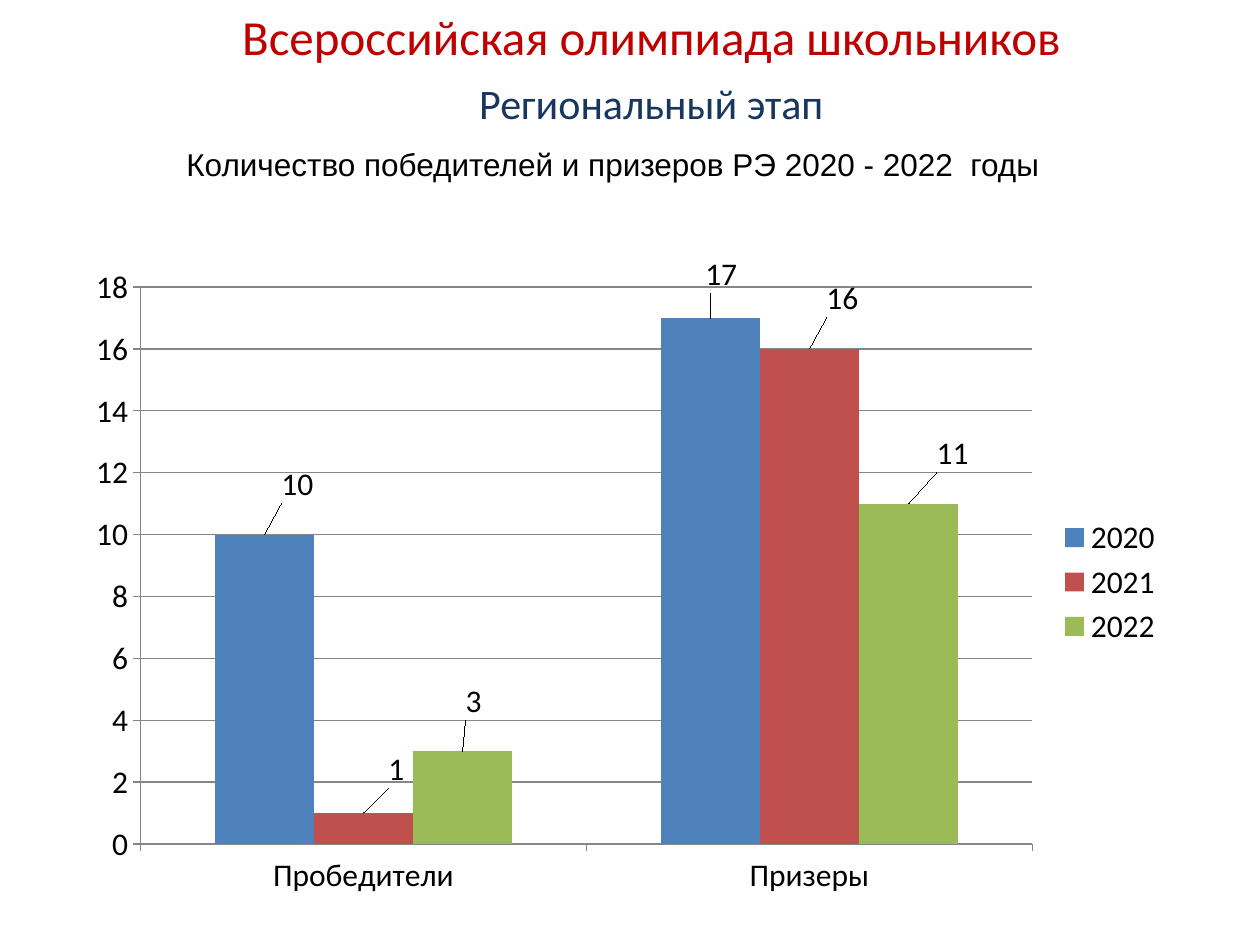
from dataclasses import dataclass

from lxml.etree import SubElement
from pptx import Presentation
from pptx.chart.data import CategoryChartData
from pptx.dml.color import RGBColor
from pptx.enum.chart import XL_CHART_TYPE, XL_LABEL_POSITION, XL_LEGEND_POSITION, XL_TICK_MARK
from pptx.enum.text import PP_ALIGN
from pptx.oxml import parse_xml
from pptx.oxml.ns import nsdecls, qn
from pptx.util import Pt


@dataclass(frozen=True)
class Heading:
    text: str
    left: float
    top: float
    width: float
    height: float
    size: float
    font: str
    color: str


@dataclass(frozen=True)
class Year:
    name: str
    counts: tuple[int, int]
    color: str
    label_shifts: tuple[tuple[float, float], tuple[float, float]]


HEADINGS = (
    Heading("Региональный этап", 24.5, 41, 695.5, 36, 24, "Calibri", "17375E"),
    Heading("Всероссийская олимпиада школьников", 24.5, 0, 695.5, 41, 28, "Calibri", "C00000"),
    Heading("Количество победителей и призеров РЭ 2020 - 2022  годы",
            8.6, 79.2, 683.3, 29, 18, "Arial", "000000"),
)
AWARDS = ("Пробедители", "Призеры")
YEARS = (
    Year("2020", (10, 17), "4F81BD", ((0.03, -0.04), (0.01, -0.03))),
    Year("2021", (1, 16), "C0504D", ((0.03, -0.03), (0.03, -0.04))),
    Year("2022", (3, 11), "9BBB59", ((0.01, -0.04), (0.04, -0.04))),
)
AXIS_COLOR = "868686"


def rgb(value: str) -> RGBColor:
    return RGBColor.from_string(value)


def add_heading(slide, heading: Heading) -> None:
    box = slide.shapes.add_textbox(
        Pt(heading.left), Pt(heading.top), Pt(heading.width), Pt(heading.height))
    box.text_frame.word_wrap = True
    paragraph = box.text_frame.paragraphs[0]
    paragraph.alignment = PP_ALIGN.CENTER
    run = paragraph.add_run()
    run.text = heading.text
    run.font.size = Pt(heading.size)
    run.font.name = heading.font
    run.font.color.rgb = rgb(heading.color)


def manual_layout(**settings: float | str):
    layout = parse_xml(f"<c:layout {nsdecls('c')}><c:manualLayout/></c:layout>")
    for tag, value in settings.items():
        SubElement(layout[0], qn(f"c:{tag}")).set("val", str(value))
    return layout


def style_axis(axis) -> None:
    axis.major_tick_mark = XL_TICK_MARK.OUTSIDE
    axis.minor_tick_mark = XL_TICK_MARK.NONE
    axis.format.line.color.rgb = rgb(AXIS_COLOR)
    axis.format.line.width = Pt(0.75)


def style_year(series, year: Year) -> None:
    series.format.fill.solid()
    series.format.fill.fore_color.rgb = rgb(year.color)
    series.invert_if_negative = False
    series.data_labels.show_value = True
    for index in range(len(AWARDS)):
        series.points[index].data_label.position = XL_LABEL_POSITION.OUTSIDE_END


def add_results_chart(slide) -> None:
    results = CategoryChartData()
    results.categories = AWARDS
    for year in YEARS:
        results.add_series(year.name, year.counts)
    chart = slide.shapes.add_chart(
        XL_CHART_TYPE.COLUMN_CLUSTERED, Pt(42.5), Pt(145.4), Pt(629.3), Pt(374.4), results).chart
    chart.has_title = False
    chart.font.name = "Calibri"
    chart.font.size = Pt(18)
    chart.font.color.rgb = rgb("000000")
    chart.has_legend = True
    chart.legend.position = XL_LEGEND_POSITION.RIGHT
    chart.legend.include_in_layout = False

    plot = chart.plots[0]
    plot.gap_width = 150
    plot.overlap = 0
    plot.vary_by_categories = False
    for series, year in zip(plot.series, YEARS):
        style_year(series, year)

    style_axis(chart.category_axis)
    counts_axis = chart.value_axis
    style_axis(counts_axis)
    counts_axis.minimum_scale = 0
    counts_axis.maximum_scale = 18
    counts_axis.major_unit = 2
    counts_axis.has_major_gridlines = True
    counts_axis.major_gridlines.format.line.color.rgb = rgb(AXIS_COLOR)
    counts_axis.major_gridlines.format.line.width = Pt(0.75)

    shifts = [shift for year in YEARS for shift in year.label_shifts]
    for label, (x, y) in zip(chart.element.xpath(".//c:dLbl"), shifts):
        label.insert(1, manual_layout(x=x, y=y))
    plot_area = chart.element.xpath(".//c:plotArea")[0]
    for layout in plot_area.findall(qn("c:layout")):
        plot_area.remove(layout)
    plot_area.insert(0, manual_layout(
        layoutTarget="inner", xMode="edge", yMode="edge", x=0.06, y=0.05, w=0.81, h=0.85))


def main() -> None:
    presentation = Presentation()
    presentation.slide_width = Pt(720)
    presentation.slide_height = Pt(540)
    slide = presentation.slides.add_slide(presentation.slide_layouts[6])
    for heading in HEADINGS:
        add_heading(slide, heading)
    add_results_chart(slide)
    presentation.save("out.pptx")


if __name__ == "__main__":
    main()
